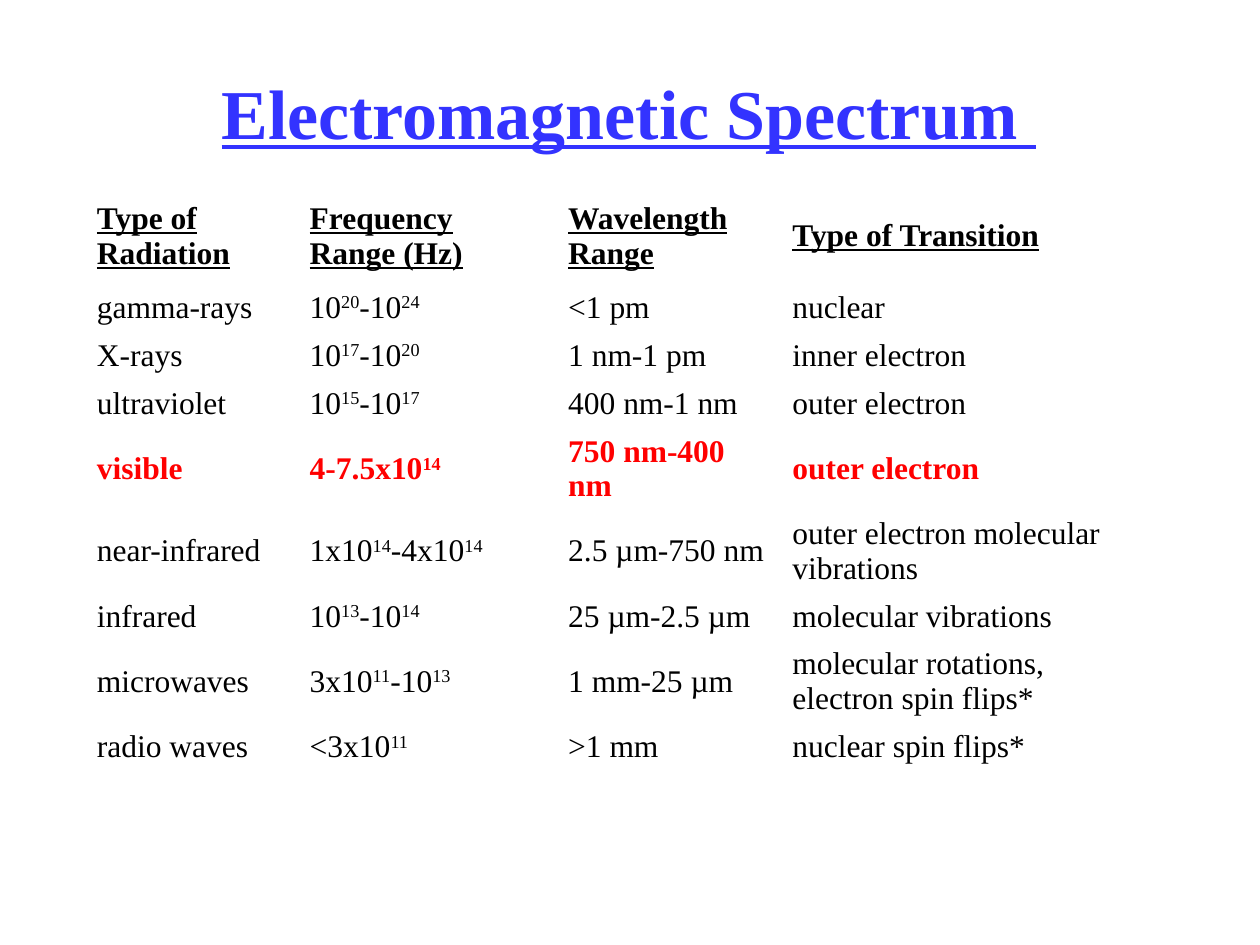
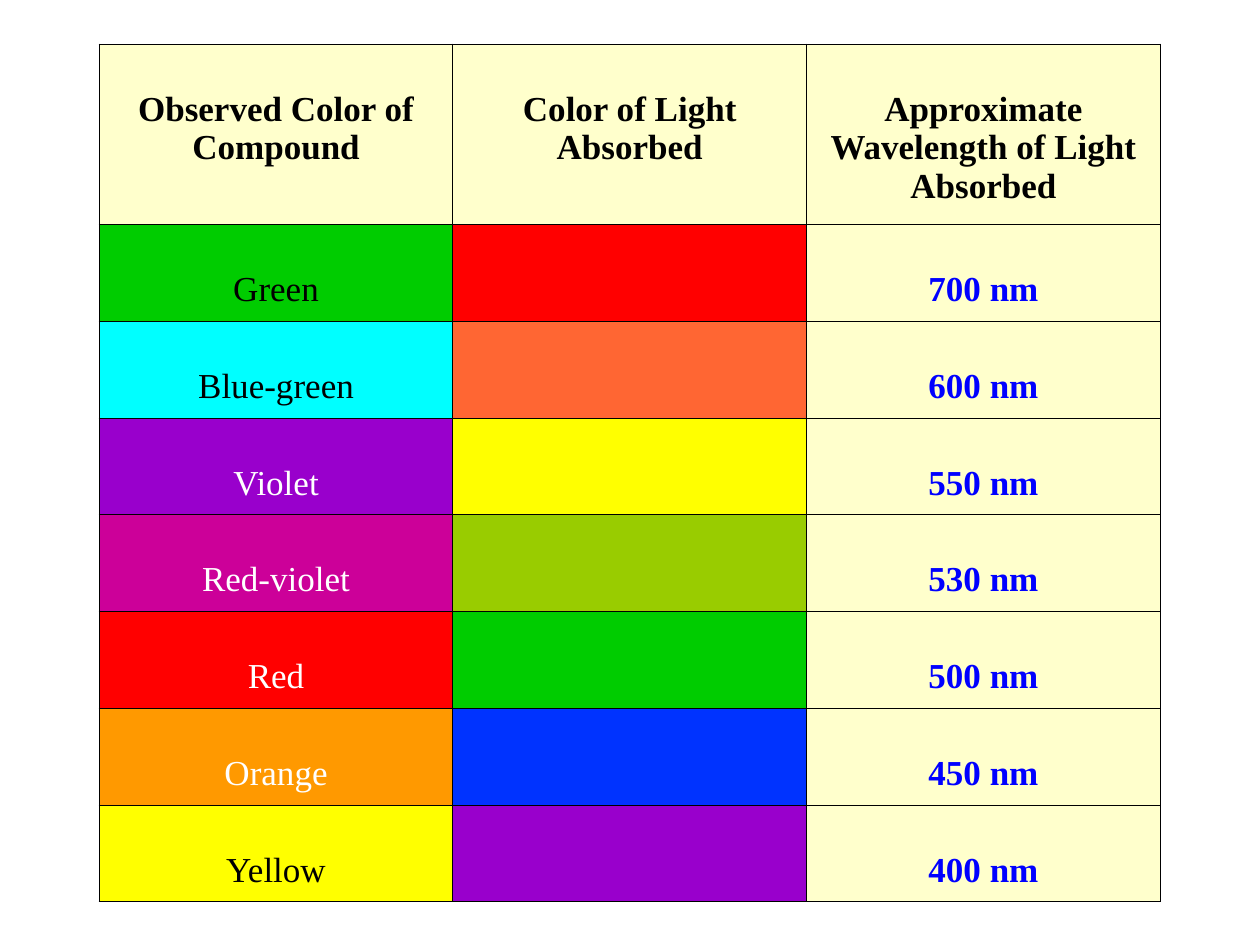
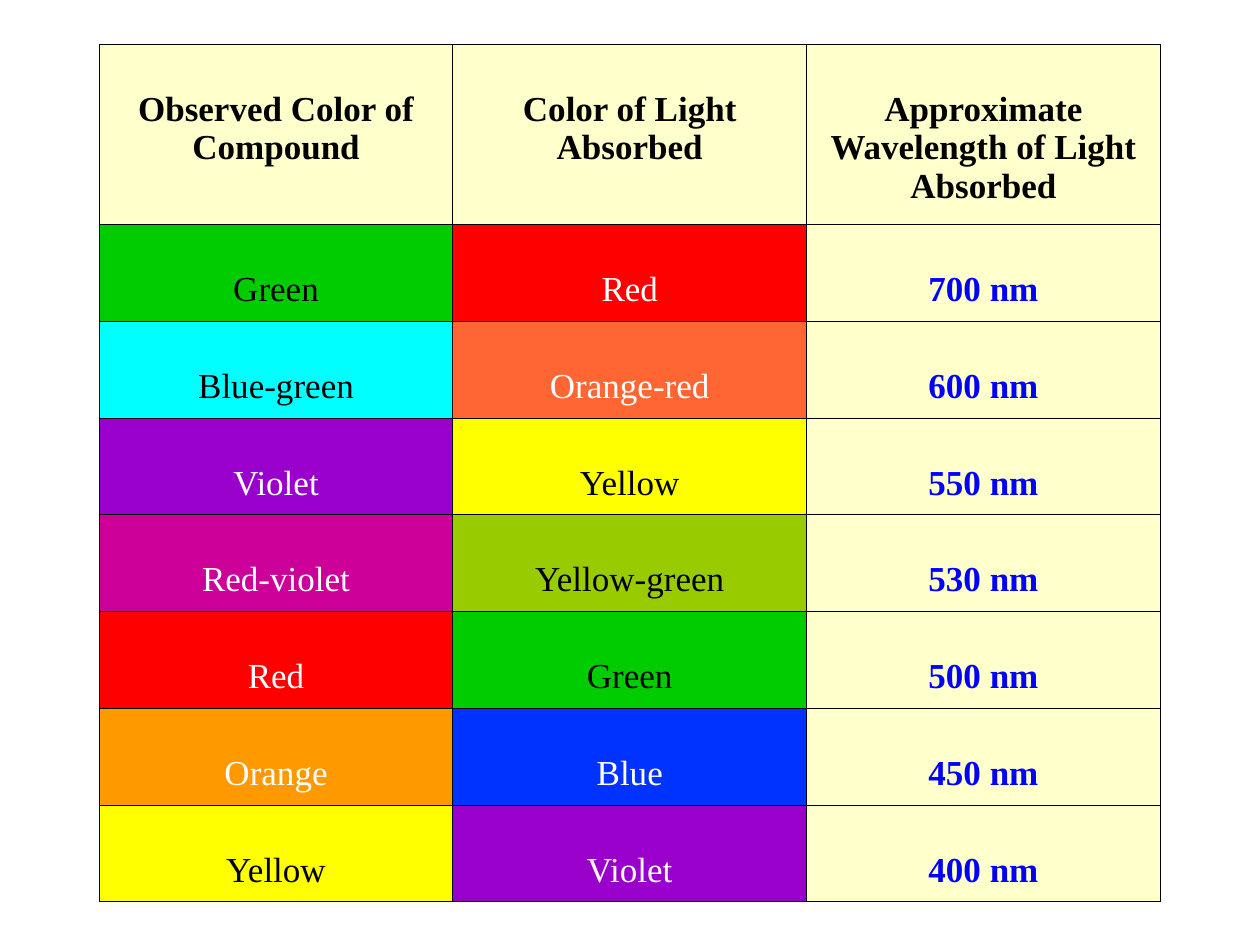
from pptx import Presentation
from pptx.dml.color import RGBColor
from pptx.enum.text import MSO_ANCHOR, MSO_AUTO_SIZE, PP_ALIGN
from pptx.oxml import parse_xml
from pptx.oxml.ns import nsdecls
from pptx.util import Cm, Pt

MIDDLE, TOP = MSO_ANCHOR.MIDDLE, MSO_ANCHOR.TOP
LEFT, CENTER = PP_ALIGN.LEFT, PP_ALIGN.CENTER
FIT_SHAPE = MSO_AUTO_SIZE.SHAPE_TO_FIT_TEXT

# Shared style
FONT = "Times New Roman"
BLACK = RGBColor(0x00, 0x00, 0x00)
WHITE = RGBColor(0xFF, 0xFF, 0xFF)
TITLE_BLUE = RGBColor(0x33, 0x33, 0xFF)
VALUE_BLUE = RGBColor(0x00, 0x00, 0xFF)
RED = RGBColor(0xFF, 0x00, 0x00)
CREAM = RGBColor(0xFF, 0xFF, 0xCC)
GREEN = RGBColor(0x00, 0xCC, 0x00)
YELLOW = RGBColor(0xFF, 0xFF, 0x00)
VIOLET = RGBColor(0x99, 0x00, 0xCC)

# Colour name -> fill and text colour of its cell
SWATCHES = {
    "Green": (GREEN, BLACK),
    "Blue-green": (RGBColor(0x00, 0xFF, 0xFF), BLACK),
    "Violet": (VIOLET, WHITE),
    "Red-violet": (RGBColor(0xCC, 0x00, 0x99), WHITE),
    "Red": (RED, WHITE),
    "Orange": (RGBColor(0xFF, 0x99, 0x00), WHITE),
    "Orange-red": (RGBColor(0xFF, 0x66, 0x33), WHITE),
    "Yellow": (YELLOW, BLACK),
    "Yellow-green": (RGBColor(0x99, 0xCC, 0x00), BLACK),
    "Blue": (RGBColor(0x00, 0x33, 0xFF), WHITE),
}

# Text between carets is superscript
SPECTRUM = [
    ("Type of Radiation", "Frequency Range (Hz)", "Wavelength Range", "Type of Transition"),
    ("gamma-rays", "10^20^-10^24^", "<1 pm", "nuclear"),
    ("X-rays", "10^17^-10^20^", "1 nm-1 pm", "inner electron"),
    ("ultraviolet", "10^15^-10^17^", "400 nm-1 nm", "outer electron"),
    ("visible", "4-7.5x10^14^", "750 nm-400 nm", "outer electron"),
    ("near-infrared", "1x10^14^-4x10^14^", "2.5 µm-750 nm", "outer electron molecular vibrations"),
    ("infrared", "10^13^-10^14^", "25 µm-2.5 µm", "molecular vibrations"),
    ("microwaves", "3x10^11^-10^13^", "1 mm-25 µm", "molecular rotations,\nelectron spin flips*"),
    ("radio waves", "<3x10^11^", ">1 mm", "nuclear spin flips*"),
]
SPECTRUM_WIDTHS = [4.29, 5.21, 4.52, 8]
HEADER_HEIGHT, SINGLE_HEIGHT, DOUBLE_HEIGHT = 1.9, 0.97, 1.65
TWO_LINE_ROWS = {"visible", "near-infrared", "microwaves"}

COLOR_HEADERS = ["Observed Color of Compound", "Color of Light Absorbed",
                 "Approximate Wavelength of Light Absorbed"]
COLOR_ROWS = [
    ("Green", "Red", "700 nm"),
    ("Blue-green", "Orange-red", "600 nm"),
    ("Violet", "Yellow", "550 nm"),
    ("Red-violet", "Yellow-green", "530 nm"),
    ("Red", "Green", "500 nm"),
    ("Orange", "Blue", "450 nm"),
    ("Yellow", "Violet", "400 nm"),
]


def write(frame, text, size, color=BLACK, bold=False, underline=False, align=LEFT):
    """Fill a text frame: one paragraph per line, superscript between carets."""
    for number, line in enumerate(text.split("\n")):
        para = frame.add_paragraph() if number else frame.paragraphs[0]
        para.alignment = align
        font = para.font
        font.name, font.size, font.bold, font.underline = FONT, Pt(size), bold, underline
        font.color.rgb = color
        for index, part in enumerate(line.split("^")):
            if not part:
                continue
            span = para.add_run()
            span.text = part
            # Direct settings, since the table style also colours text
            span.font.name, span.font.size = FONT, Pt(size)
            span.font.bold, span.font.underline = bold, underline
            span.font.color.rgb = color
            if index % 2:
                span._r.get_or_add_rPr().set("baseline", "30000")


def add_title(page, text):
    box = page.shapes.add_textbox(Cm(4.22), Cm(1.27), Cm(16.97), Cm(1.96))
    frame = box.text_frame
    frame.word_wrap = False
    frame.auto_size = FIT_SHAPE
    frame.vertical_anchor = MIDDLE
    write(frame, text, 40, TITLE_BLUE, bold=True, underline=True)


def add_grid(page, left, top, widths, heights):
    """Add an unbanded table with the given column widths and row heights in cm."""
    table = page.shapes.add_table(len(heights), len(widths), Cm(left), Cm(top),
                                  Cm(sum(widths)), Cm(sum(heights))).table
    table.first_row = table.horz_banding = False
    for column, width in zip(table.columns, widths):
        column.width = Cm(width)
    for row, height in zip(table.rows, heights):
        row.height = Cm(height)
    return table


def add_borders(cell):
    properties = cell._tc.get_or_add_tcPr()
    for side in "LRTB":
        properties.append(parse_xml(
            f'<a:ln{side} {nsdecls("a")} w="{Pt(0.75)}"><a:solidFill>'
            f'<a:srgbClr val="{BLACK}"/></a:solidFill></a:ln{side}>'))


def add_spectrum_table(page):
    heights = [HEADER_HEIGHT] + [DOUBLE_HEIGHT if row[0] in TWO_LINE_ROWS else SINGLE_HEIGHT
                                 for row in SPECTRUM[1:]]
    table = add_grid(page, 1.7, 3.81, SPECTRUM_WIDTHS, heights)
    for row_index, row in enumerate(SPECTRUM):
        header, visible = row_index == 0, row[0] == "visible"
        for column_index, text in enumerate(row):
            cell = table.cell(row_index, column_index)
            cell.fill.background()
            cell.vertical_anchor = MIDDLE
            write(cell.text_frame, text, 18, RED if visible else BLACK,
                  bold=header or visible, underline=header)


def fill_color_cell(cell, text, fill, color=BLACK, bold=False):
    add_borders(cell)
    cell.fill.solid()
    cell.fill.fore_color.rgb = fill
    cell.vertical_anchor = TOP
    cell.margin_top = Cm(0.92)
    write(cell.text_frame, text, 20, color, bold, align=CENTER)


def add_color_table(page, show_absorbed):
    """Add the colour table; the absorbed colours are named only on request."""
    table = add_grid(page, 2, 0.89, [7.13] * 3, [3.64] + [1.95] * len(COLOR_ROWS))
    for column_index, text in enumerate(COLOR_HEADERS):
        fill_color_cell(table.cell(0, column_index), text, CREAM, bold=True)
    for row_index, (observed, absorbed, wavelength) in enumerate(COLOR_ROWS, 1):
        fill_color_cell(table.cell(row_index, 0), observed, *SWATCHES[observed])
        fill_color_cell(table.cell(row_index, 1), absorbed if show_absorbed else "",
                        *SWATCHES[absorbed])
        fill_color_cell(table.cell(row_index, 2), wavelength, CREAM, VALUE_BLUE, bold=True)


def main():
    deck = Presentation()
    deck.slide_width, deck.slide_height = Cm(25.4), Cm(19.05)
    blank = deck.slide_layouts[6]

    # Spectrum overview
    page = deck.slides.add_slide(blank)
    add_spectrum_table(page)
    add_title(page, "Electromagnetic Spectrum ")

    # Colour table as a question, then with its answers
    for show_absorbed in (False, True):
        add_color_table(deck.slides.add_slide(blank), show_absorbed)

    deck.save("out.pptx")


if __name__ == "__main__":
    main()
